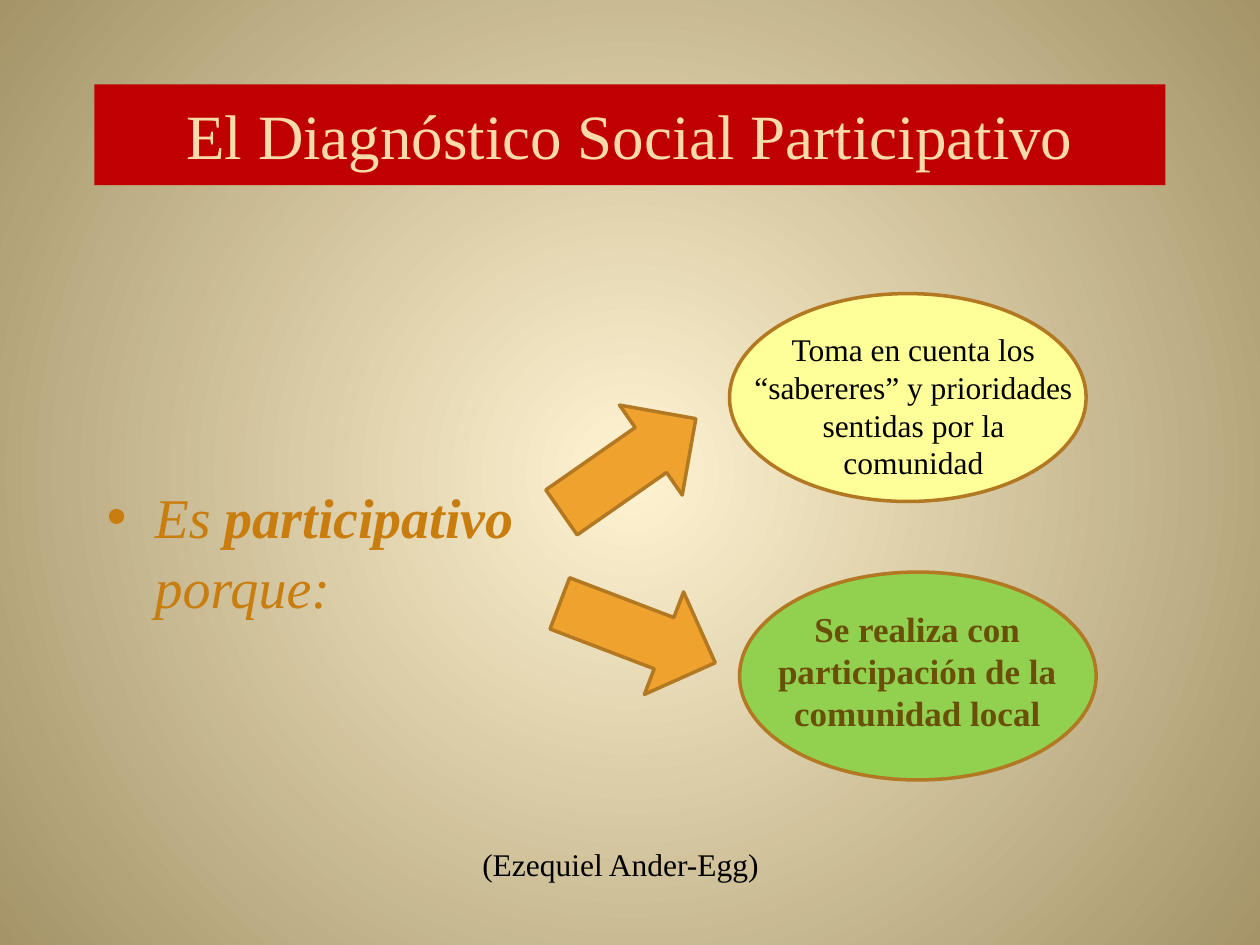
from lxml.etree import SubElement
from pptx import Presentation
from pptx.dml.color import RGBColor
from pptx.enum.shapes import MSO_SHAPE
from pptx.enum.text import MSO_ANCHOR, PP_ALIGN
from pptx.oxml.ns import qn
from pptx.util import Inches, Pt

FONT = "Times New Roman"
COLORS = {
    "center": "FFF3D2",
    "edge": "A49468",
    "banner": "C00000",
    "title": "F9DAAB",
    "statement": "C87D0E",
    "arrow": "F0A22E",
    "outline": "B27822",
    "yellow": "FFFF99",
    "green": "92D050",
    "brown": "695008",
    "black": "000000",
}


def color(name):
    return RGBColor.from_string(COLORS[name])


def lengths(area):
    return [Inches(value) for value in area]


def paint_background(slide):
    fill = slide.background.fill
    fill.gradient()
    for stop, name, position in zip(fill.gradient_stops, ("center", "edge"), (0, 1)):
        stop.color.rgb = color(name)
        stop.position = position
    gradient = slide._element.find(".//" + qn("a:gradFill"))
    gradient.remove(gradient.find(qn("a:lin")))
    focus = SubElement(gradient, qn("a:path"), path="circle")
    SubElement(focus, qn("a:fillToRect"), dict.fromkeys("ltrb", "50000"))


def add_figure(slide, kind, area, fill, outline=None, rotation=0):
    figure = slide.shapes.add_shape(kind, *lengths(area))
    figure.shadow.inherit = False
    figure.rotation = rotation
    figure.fill.solid()
    figure.fill.fore_color.rgb = color(fill)
    if outline:
        figure.line.color.rgb = color(outline)
        figure.line.width = Pt(2)
    else:
        figure.line.fill.background()
    return figure


def style_span(span, size, name, bold=False, italic=False):
    font = span.font
    font.name, font.size = FONT, Pt(size)
    font.bold, font.italic = bold, italic
    font.color.rgb = color(name)


def write_centered(shape, text, size, name, bold=False):
    shape.text_frame.word_wrap = True
    para = shape.text_frame.paragraphs[0]
    para.text = text
    para.alignment = PP_ALIGN.CENTER
    style_span(para.runs[0], size, name, bold)


def add_caption(slide, area, text, size, name, bold=False):
    box = slide.shapes.add_textbox(*lengths(area))
    write_centered(box, text, size, name, bold)


def add_title(slide):
    banner = add_figure(slide, MSO_SHAPE.RECTANGLE, (0.75, 0.67, 8.5, 0.8), "banner")
    banner.text_frame.vertical_anchor = MSO_ANCHOR.MIDDLE
    write_centered(banner, "El Diagnóstico Social Participativo", 36, "title")


def add_statement(slide):
    box = slide.shapes.add_textbox(*lengths((0.75, 3.75, 3.6, 1.25)))
    box.text_frame.word_wrap = True
    para = box.text_frame.paragraphs[0]
    para.line_spacing = 1.05
    indent = Inches(0.38)
    properties = para._p.get_or_add_pPr()
    properties.set("marL", str(indent))
    properties.set("indent", str(-indent))
    SubElement(properties, qn("a:buFont"), typeface="Arial")
    SubElement(properties, qn("a:buChar"), char="•")
    for text, bold in (("Es ", False), ("participativo", True), ("porque:", False)):
        span = para.add_run()
        span.text = text
        style_span(span, 32, "statement", bold, italic=True)
        if bold:
            para.add_line_break()


def main():
    deck = Presentation()
    deck.slide_width, deck.slide_height = Inches(10), Inches(7.5)
    slide = deck.slides.add_slide(deck.slide_layouts[6])
    paint_background(slide)
    add_title(slide)
    add_statement(slide)

    for area, rotation in (
        ((4.34, 3.26, 1.3, 0.87), 325.1),
        ((4.4, 4.59, 1.32, 0.87), 20.9),
    ):
        add_figure(slide, MSO_SHAPE.RIGHT_ARROW, area, "arrow", "outline", rotation)

    for left, top, fill in ((5.79, 2.33, "yellow"), (5.87, 4.54, "green")):
        add_figure(slide, MSO_SHAPE.OVAL, (left, top, 2.83, 1.65), fill, "outline")

    add_caption(
        slide,
        (5.87, 2.57, 2.76, 1.31),
        "Toma en cuenta los “sabereres” y prioridades sentidas por la comunidad",
        18,
        "black",
    )
    add_caption(
        slide,
        (6.02, 4.77, 2.52, 1.11),
        "Se realiza con participación de la comunidad local",
        20,
        "brown",
        bold=True,
    )
    add_caption(slide, (3.27, 6.66, 3.31, 0.4), "(Ezequiel Ander-Egg)", 18, "black")
    deck.save("out.pptx")


if __name__ == "__main__":
    main()
